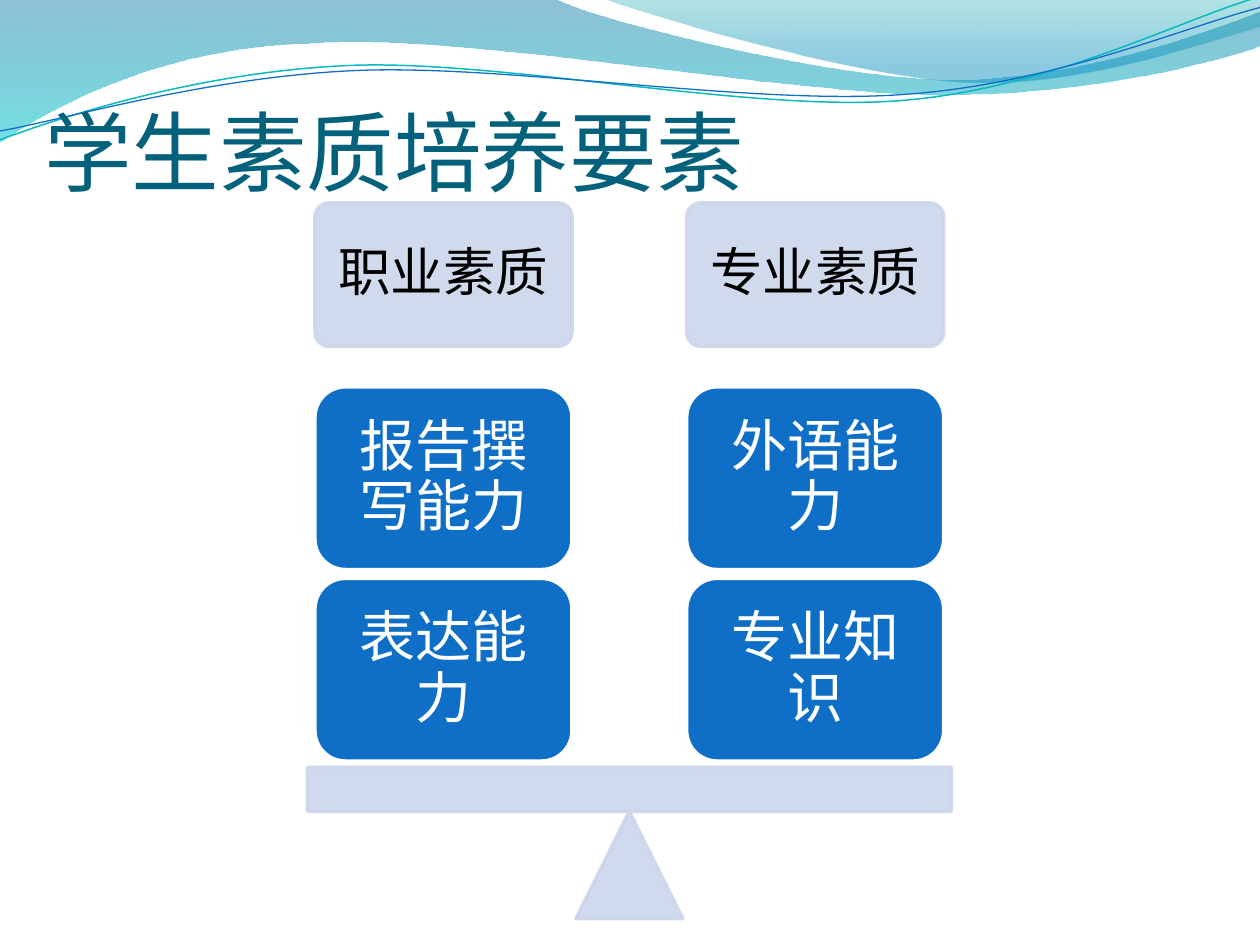
import math

import pptx
import pptx.util
import pptx.dml.color
import pptx.enum.shapes
import pptx.enum.text
import pptx.oxml.ns
import lxml.etree

Inches = pptx.util.Inches
Pt = pptx.util.Pt
KIND = pptx.enum.shapes.MSO_SHAPE
ALIGN = pptx.enum.text.PP_ALIGN
ANCHOR = pptx.enum.text.MSO_ANCHOR
qn = pptx.oxml.ns.qn

COLORS = {
    "title": "04617B", "pale": "CCD5EA", "blue": "0F6FC6", "teal": "0AB8BF",
    "white": "FFFFFF", "black": "000000", "deep": "0074A1", "cyan": "00C6CF",
    "sea": "00A1A9", "sky": "008BBF",
}

# Each step is a line (x, y) or a cubic curve (x1, y1, x2, y2, x, y)
WAVES = [
    ([(0, 0), (4.4, -0.01), (4.76, 0.17, 6.64, 0.63, 7.58, 0.63),
      (8.53, 0.63, 9.58, 0.26, 10, 0.09), (10.01, 0.36),
      (9.83, 0.44, 8.7, 0.76, 7.46, 0.75), (6.22, 0.75, 3.82, 0.28, 2.57, 0.34),
      (1.29, 0.36, 0.46, 0.83, -0.01, 1.13)],
     [("deep", 0, 45), ("cyan", 1, 55)]),
    ([(4.79, -0.01), (5.09, 0.11, 6.82, 0.62, 7.69, 0.65),
      (8.56, 0.69, 9.61, 0.32, 10, 0.21), (10, 0)],
     [("sea", 0, 30), ("sky", 0.8, 45)]),
]
TILT = 357.3
# Steps as they lie after tilting, centre, colour, width
STRANDS = [
    ([(0, 1.11), (0.48, 0.93, 1.58, 0.57, 2.77, 0.52),
      (3.95, 0.47, 5.93, 0.89, 7.13, 0.8), (8.33, 0.71, 9.38, 0.15, 9.98, -0.02)],
     (4.99, 0.57), "teal", 0.85),
    ([(0, 1.04), (0.47, 0.96, 1.64, 0.61, 2.83, 0.56),
      (4.03, 0.51, 5.97, 0.84, 7.17, 0.75), (8.36, 0.67, 9.41, 0.21, 10, 0.06)],
     (5, 0.59), "blue", 0.75),
]
# Column left edge, heading, then blocks from top to bottom
PANS = [(2.5, "职业素质", ["报告撰写能力", "表达能力"]),
        (5.45, "专业素质", ["外语能力", "专业知识"])]


def tint(color, name):
    color.rgb = pptx.dml.color.RGBColor.from_string(COLORS[name])


def fade(node, *alphas):
    """Set the opacity, in percent, of the colours below node in order."""
    for color, alpha in zip(list(node.iter(qn("a:srgbClr"))), alphas):
        lxml.etree.SubElement(color, qn("a:alpha")).set("val", str(alpha * 1000))


def pairs(step):
    return list(zip(step[::2], step[1::2]))


def level(steps, mid):
    """Turn the steps back by the tilt about mid."""
    turn = math.radians(360 - TILT)
    cos, sin = math.cos(turn), math.sin(turn)
    flat = []
    for step in steps:
        rel = [(x - mid[0], y - mid[1]) for x, y in pairs(step)]
        flat.append(tuple(v for x, y in rel
                          for v in (mid[0] + x * cos - y * sin,
                                    mid[1] + x * sin + y * cos)))
    return flat


def add_path(slide, steps, close):
    """Draw lines between the end points, then bend those that are curves."""
    ends = [(Inches(step[-2]), Inches(step[-1])) for step in steps]
    pen = slide.shapes.build_freeform(*ends[0])
    pen.add_line_segments(ends[1:], close=close)
    shape = pen.convert_to_shape()
    shape.shadow.inherit = False
    lines = list(shape.element.iter(qn("a:lnTo")))
    for line, step in zip(lines, steps[1:]):
        if len(step) == 2:
            continue
        curve = lxml.etree.Element(qn("a:cubicBezTo"))
        for x, y in pairs(step):
            point = lxml.etree.SubElement(curve, qn("a:pt"))
            point.set("x", str(Inches(x) - shape.left))
            point.set("y", str(Inches(y) - shape.top))
        line.getparent().replace(line, curve)
    return shape


def add_wave(slide, steps, stops):
    shape = add_path(slide, steps, True)
    shape.line.fill.background()
    shape.fill.gradient()
    shape.fill.gradient_angle = 270
    for stop, (name, place, alpha) in zip(shape.fill.gradient_stops, stops):
        tint(stop.color, name)
        stop.position = place
    fade(shape.element.spPr, *[alpha for _, _, alpha in stops])


def add_strand(slide, steps, mid, name, width):
    shape = add_path(slide, level(steps, mid), False)
    shape.rotation = TILT
    shape.fill.background()
    tint(shape.line.color, name)
    shape.line.width = Pt(width)


def set_text(shape, text, font, size, name, anchor, pads):
    frame = shape.text_frame
    frame.word_wrap = True
    frame.vertical_anchor = anchor
    (frame.margin_left, frame.margin_top,
     frame.margin_right, frame.margin_bottom) = [Inches(pad) for pad in pads]
    para = frame.paragraphs[0]
    para.text = text
    run = para.runs[0]
    run.font.name = font
    run.font.size = Pt(size)
    tint(run.font.color, name)
    return para


def add_block(slide, kind, box, fill, line, alpha=None):
    shape = slide.shapes.add_shape(kind, *[Inches(v) for v in box])
    shape.shadow.inherit = False
    shape.fill.solid()
    tint(shape.fill.fore_color, fill)
    tint(shape.line.color, line)
    shape.line.width = Pt(2)
    if alpha:
        fade(shape.element.spPr, alpha, alpha)
    return shape


def add_label(shape, text, size, name, pad):
    para = set_text(shape, text, "Vollkorn", size, name, ANCHOR.MIDDLE, [pad] * 4)
    para.alignment = ALIGN.CENTER
    para.line_spacing = 0.9


def add_pan(slide, left, head, items):
    shape = add_block(slide, KIND.ROUNDED_RECTANGLE, (left, 1.61, 2.04, 1.14),
                      "pale", "pale", 90)
    shape.adjustments[0] = 0.1
    add_label(shape, head, 30, "black", 0.12)
    for row, item in enumerate(items):
        box = (left, 3.07 + 1.52 * row, 2.04, 1.45)
        shape = add_block(slide, KIND.ROUNDED_RECTANGLE, box, "blue", "white")
        add_label(shape, item, 32, "white", 0.13)


def main():
    deck = pptx.Presentation()
    deck.slide_width, deck.slide_height = Inches(10), Inches(7.5)
    slide = deck.slides.add_slide(deck.slide_layouts[6])

    # Waves along the top
    for steps, stops in WAVES:
        add_wave(slide, steps, stops)
    for strand in STRANDS:
        add_strand(slide, *strand)

    # Title
    title = slide.shapes.add_textbox(Inches(0.35), Inches(0.36), Inches(9), Inches(1.25))
    set_text(title, "学生素质培养要素", "Calibri", 50, "title",
             ANCHOR.BOTTOM, (0, 0.05, 0, 0))

    # Balance: pivot and beam, then the loads
    add_block(slide, KIND.ISOSCELES_TRIANGLE, (4.57, 6.44, 0.85, 0.85), "pale", "pale", 90)
    add_block(slide, KIND.RECTANGLE, (2.44, 6.09, 5.11, 0.35), "pale", "pale", 90)
    for left, head, items in PANS:
        add_pan(slide, left, head, items)

    deck.save("out.pptx")


if __name__ == "__main__":
    main()
